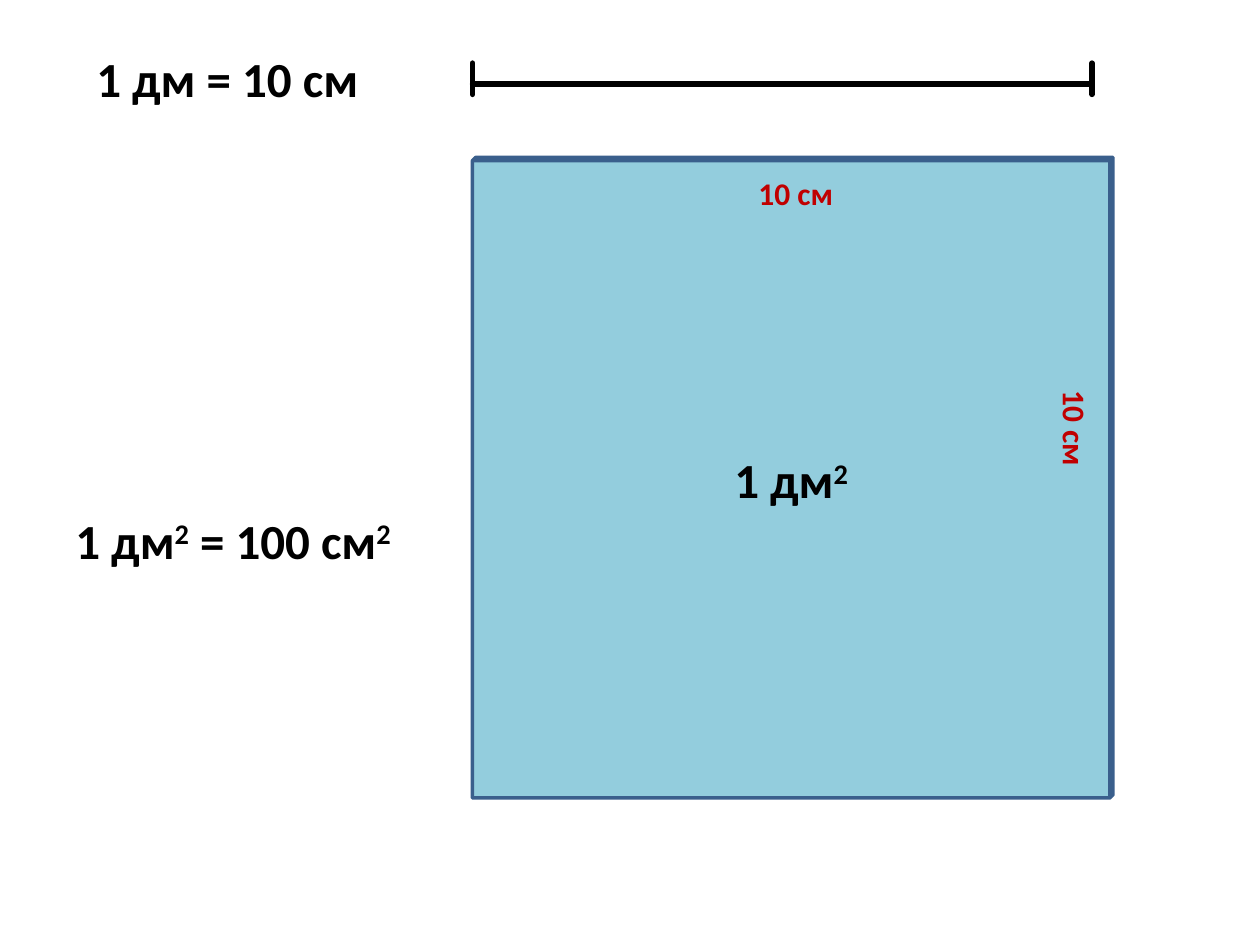
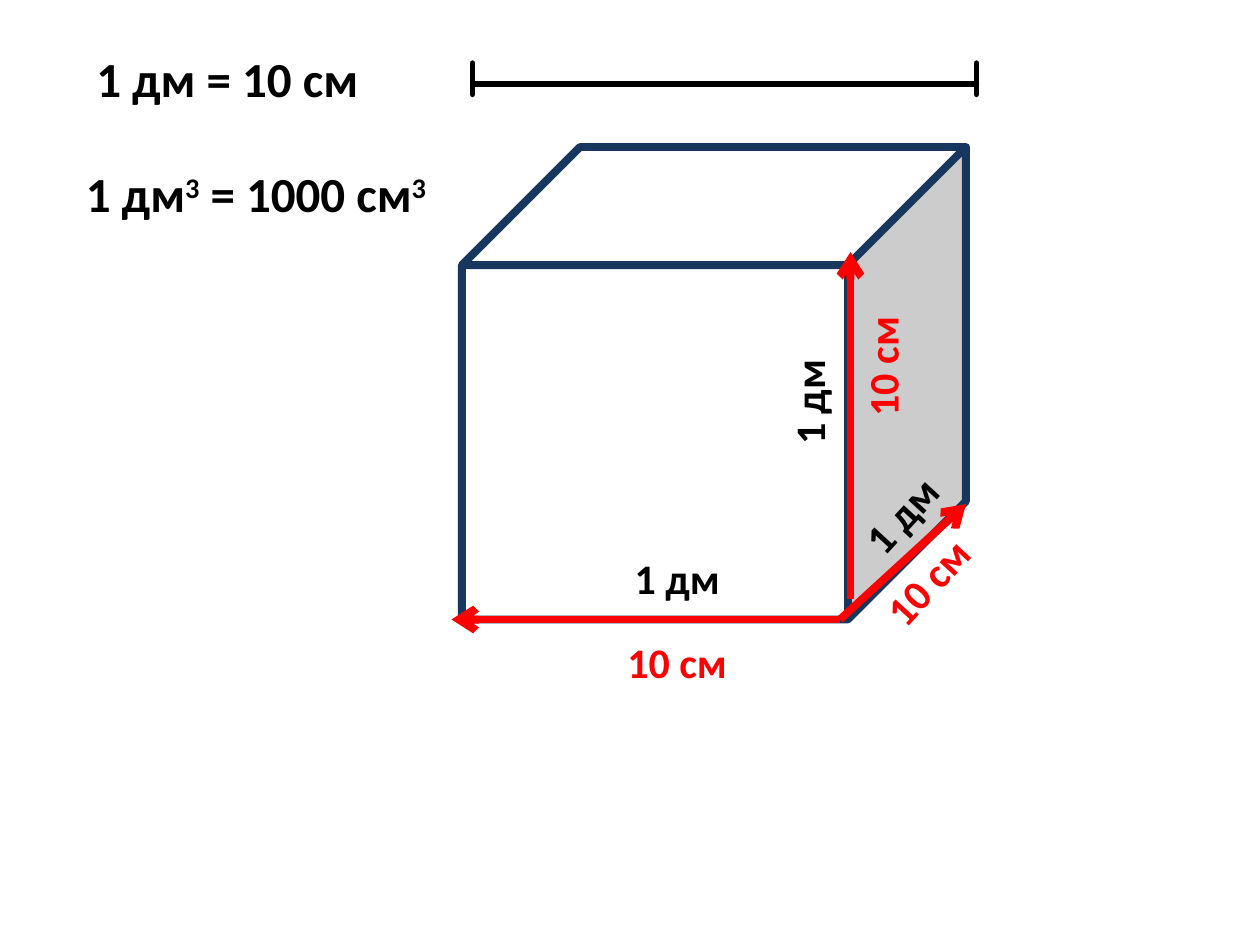
from pptx import Presentation
from pptx.dml.color import RGBColor
from pptx.enum.shapes import MSO_CONNECTOR, MSO_SHAPE
from pptx.enum.text import MSO_ANCHOR, MSO_AUTO_SIZE, PP_ALIGN
from pptx.oxml.ns import qn
from pptx.util import Inches, Pt
from lxml import etree

CUBE = MSO_SHAPE.CUBE
STRAIGHT = MSO_CONNECTOR.STRAIGHT
MIDDLE = MSO_ANCHOR.MIDDLE
GROW = MSO_AUTO_SIZE.SHAPE_TO_FIT_TEXT
LEFT, CENTER = PP_ALIGN.LEFT, PP_ALIGN.CENTER

BLACK = RGBColor(0x00, 0x00, 0x00)
WHITE = RGBColor(0xFF, 0xFF, 0xFF)
RED = RGBColor(0xFF, 0x00, 0x00)
DARK_RED = RGBColor(0xC0, 0x00, 0x00)
SKY = RGBColor(0x93, 0xCD, 0xDD)
STEEL = RGBColor(0x3A, 0x5F, 0x8C)
NAVY = RGBColor(0x17, 0x37, 0x5E)

FONT = "Calibri"
COLUMNS, ROWS = 120, 90  # grid of the whole slide
RULER_START = 45


def write(frame, text, size=28, color=BLACK, align=LEFT):
    """Write bold text; a digit after ^ is raised."""
    paragraph = frame.paragraphs[0]
    paragraph.alignment = align
    first, *powers = text.split("^")
    pieces = [(first, False)]
    for piece in powers:
        pieces += [(piece[0], True), (piece[1:], False)]
    for piece, raised in pieces:
        if not piece:
            continue
        run = paragraph.add_run()
        run.text = piece
        run.font.name, run.font.size, run.font.bold = FONT, Pt(size), True
        run.font.color.rgb = color
        if raised:
            run.font._element.set("baseline", "30000")


class Board:
    def __init__(self):
        self.deck = Presentation()
        self.deck.slide_width, self.deck.slide_height = Inches(10), Inches(7.5)
        self.slide = None

    def new_slide(self):
        self.slide = self.deck.slides.add_slide(self.deck.slide_layouts[6])

    def x(self, columns):
        return round(self.deck.slide_width * columns / COLUMNS)

    def y(self, rows):
        return round(self.deck.slide_height * rows / ROWS)

    def box(self, left, top, width, height):
        return self.x(left), self.y(top), self.x(width), self.y(height)

    def text(self, text, left, top, width, height, angle=0, **style):
        area = self.slide.shapes.add_textbox(*self.box(left, top, width, height))
        area.rotation = angle
        area.text_frame.word_wrap = False
        area.text_frame.auto_size = GROW
        write(area.text_frame, text, **style)

    def label(self, text, center, extent, angle=0, **style):
        """Place text by its centre, so that it turns in place."""
        (column, row), (width, height) = center, extent
        self.text(text, column - width / 2, row - height / 2, width, height,
                  angle, align=CENTER, **style)

    def line(self, start, end, color=BLACK, width=3, arrow=False):
        line = self.slide.shapes.add_connector(
            STRAIGHT, self.x(start[0]), self.y(start[1]),
            self.x(end[0]), self.y(end[1]))
        line.line.color.rgb, line.line.width = color, Pt(width)
        outline = line.line._get_or_add_ln()
        if arrow:
            etree.SubElement(outline, qn("a:tailEnd"), type="arrow")
        else:
            outline.set("cap", "rnd")
        etree.SubElement(line._element.spPr, qn("a:effectLst"))

    def cube(self, left, top, width, height, depth, fill, edge, edge_width, text=""):
        cube = self.slide.shapes.add_shape(CUBE, *self.box(left, top, width, height))
        cube.adjustments[0] = depth
        cube.shadow.inherit = False
        cube.fill.solid()
        cube.fill.fore_color.rgb = fill
        cube.line.color.rgb, cube.line.width = edge, Pt(edge_width)
        if text:
            cube.text_frame.vertical_anchor = MIDDLE
            write(cube.text_frame, text, align=CENTER)

    def ruler(self, end):
        """Length formula with a decimetre segment beside it."""
        self.text("1 дм = 10 см", 8, 4, 27.7, 6.9)
        self.line((RULER_START, 8), (end, 8))
        for column in (RULER_START, end):
            self.line((column, 6), (column, 9))


def area_slide(board):
    board.new_slide()
    board.ruler(104)
    board.text("1 дм^2 = 100 см^2", 6, 48, 33.7, 6.9)
    board.cube(RULER_START, 15, 61, 61, 0.005, SKY, STEEL, 2, "1 дм^2")
    # Side lengths
    for center, angle in (((75.8, 18.4), 0), ((102.4, 40.8), 90)):
        board.label("10 см", center, (9.6, 4.8), angle, size=18, color=DARK_RED)


def volume_slide(board):
    board.new_slide()
    board.ruler(93)
    board.text("1 дм^3 = 1000 см^3", 7, 15, 35.7, 6.9)
    board.cube(44, 14, 48, 45, 0.25, WHITE, NAVY, 4.5)
    # Each edge: arrow, its angle, centres of the two length labels
    edges = (
        ((80, 59), (43, 59), 0, (64.5, 55), (64.5, 63)),
        ((81, 57), (81, 24), 270, (77, 38.3), (84, 34.9)),
        ((80, 59), (92, 48), 312.6, (85.8, 49), (88.3, 55.4)),
    )
    for start, end, angle, decimetres, centimetres in edges:
        board.line(start, end, RED, 4.5, arrow=True)
        board.label("1 дм", decimetres, (10.6, 6), angle, size=24)
        board.label("10 см", centimetres, (12, 6), angle, size=24, color=RED)


def main():
    board = Board()
    area_slide(board)
    volume_slide(board)
    board.deck.save("out.pptx")


if __name__ == "__main__":
    main()
